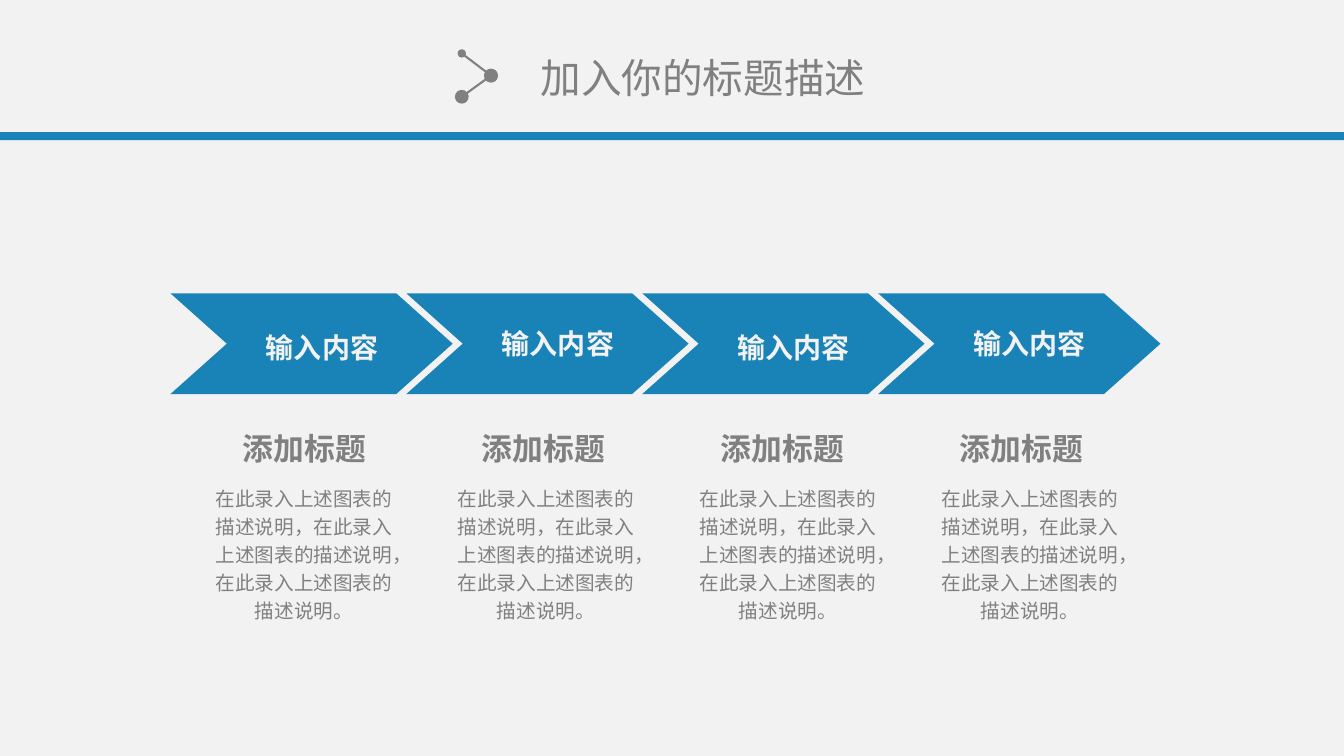
"""Build a four-step chevron process slide with a heading and note under each step."""
from lxml import etree
from pptx import Presentation
from pptx.dml.color import RGBColor
from pptx.enum.shapes import MSO_CONNECTOR, MSO_SHAPE
from pptx.enum.text import MSO_ANCHOR, MSO_AUTO_SIZE, PP_ALIGN
from pptx.oxml.ns import qn
from pptx.util import Inches, Pt

TITLE = "加入你的标题描述"
NOTE = "在此录入上述图表的描述说明，在此录入上述图表的描述说明，在此录入上述图表的描述说明。"
STEPS = [
    {"label": "输入内容", "spacing": 1.2, "heading": "添加标题", "note": NOTE},
    {"label": "输入内容", "spacing": 1.0, "heading": "添加标题", "note": NOTE},
    {"label": "输入内容", "spacing": 1.2, "heading": "添加标题", "note": NOTE},
    {"label": "输入内容", "spacing": 1.0, "heading": "添加标题", "note": NOTE},
]
ICON_LINES = [((4.58, 0.53), (4.87, 0.75), "med"), ((4.87, 0.75), (4.58, 0.96), "lg")]

BLUE = RGBColor(0x19, 0x83, 0xB7)
GREY = RGBColor(0x80, 0x80, 0x80)
PALE = RGBColor(0xF2, 0xF2, 0xF2)
FONT = "Noto Sans CJK SC"
STRAIGHT, RECT = MSO_CONNECTOR.STRAIGHT, MSO_SHAPE.RECTANGLE
TOP, MIDDLE = MSO_ANCHOR.TOP, MSO_ANCHOR.MIDDLE
LEFT, CENTER = PP_ALIGN.LEFT, PP_ALIGN.CENTER
GROW = MSO_AUTO_SIZE.SHAPE_TO_FIT_TEXT

SLIDE_W, SLIDE_H = 13.33, 7.5
ARROW_X, ARROW_Y, ARROW_STEP = 1.69, 2.91, 2.34
ARROW_W, ARROW_H, ARROW_TIP = 2.8, 1.0, 0.56
LABEL_INDENT, LABEL_W, LABEL_H = 0.32, 2.37, 0.44
HEADING_X, HEADING_Y, HEADING_STEP = 2.3, 4.21, 2.37
NOTE_X, NOTE_Y, NOTE_STEP = 1.98, 4.73, 2.4


def paint(shape, color):
    shape.fill.solid()
    shape.fill.fore_color.rgb = color
    shape.line.fill.background()
    shape.shadow.inherit = False


def write(shape, text, size, color, bold=False, align=CENTER, anchor=TOP,
          spacing=1.0, wrap=True, inset=(0.1, 0.05)):
    tf = shape.text_frame
    tf.word_wrap = wrap
    tf.auto_size = GROW
    tf.vertical_anchor = anchor
    tf.margin_left = tf.margin_right = Inches(inset[0])
    tf.margin_top = tf.margin_bottom = Inches(inset[1])
    p = tf.paragraphs[0]
    p.alignment = align
    p.line_spacing = spacing
    r = p.add_run()
    r.text = text
    r.font.size, r.font.bold, r.font.name = Pt(size), bold, FONT
    r.font.color.rgb = color
    etree.SubElement(r.font._element, qn("a:ea"), typeface=FONT)


def add_text(s, box, text, size, color, **style):
    write(s.shapes.add_textbox(*map(Inches, box)), text, size, color, **style)


def add_icon_line(s, start, end, head_size):
    line = s.shapes.add_connector(STRAIGHT, *map(Inches, start + end))
    line.line.color.rgb = GREY
    line.line.width = Pt(1.5)
    ln = line.line._get_or_add_ln()
    for tag, size in (("a:headEnd", head_size), ("a:tailEnd", "lg")):
        etree.SubElement(ln, qn(tag), type="oval", w=size, len=size)
    etree.SubElement(line._element.spPr, qn("a:effectLst"))


def add_arrow(s, x):
    right, mid, bottom = x + ARROW_W, ARROW_Y + ARROW_H / 2, ARROW_Y + ARROW_H
    outline = [(x, ARROW_Y), (right - ARROW_TIP, ARROW_Y), (right, mid),
               (right - ARROW_TIP, bottom), (x, bottom), (x + ARROW_TIP, mid)]
    points = [(Inches(px), Inches(py)) for px, py in outline]
    builder = s.shapes.build_freeform(*points[0])
    builder.add_line_segments(points[1:], close=True)
    paint(builder.convert_to_shape(), BLUE)


def main():
    prs = Presentation()
    prs.slide_width, prs.slide_height = Inches(SLIDE_W), Inches(SLIDE_H)
    s = prs.slides.add_slide(prs.slide_layouts[5])
    s.background.fill.solid()
    s.background.fill.fore_color.rgb = PALE

    title = s.shapes.title
    title.left, title.top, title.width, title.height = map(Inches, (5.26, 0.47, 3.46, 0.59))
    write(title, TITLE, 29, GREY, align=LEFT, wrap=False)

    paint(s.shapes.add_shape(RECT, 0, Inches(1.31), prs.slide_width, Inches(0.08)), BLUE)
    for start, end, head_size in ICON_LINES:
        add_icon_line(s, start, end, head_size)

    for i, step in enumerate(STEPS):
        x = ARROW_X + i * ARROW_STEP
        add_arrow(s, x)
        label_y = ARROW_Y + (ARROW_H - LABEL_H) / 2
        add_text(s, (x + LABEL_INDENT, label_y, LABEL_W, LABEL_H), step["label"], 20, PALE,
                 bold=True, anchor=MIDDLE, spacing=step["spacing"], inset=(0, 0))
        add_text(s, (HEADING_X + i * HEADING_STEP, HEADING_Y, 1.44, 0.47), step["heading"],
                 22, GREY, bold=True, wrap=False)
        add_text(s, (NOTE_X + i * NOTE_STEP, NOTE_Y, 2.07, 1.52), step["note"], 14, GREY,
                 spacing=1.2)

    prs.save("out.pptx")


if __name__ == "__main__":
    main()
